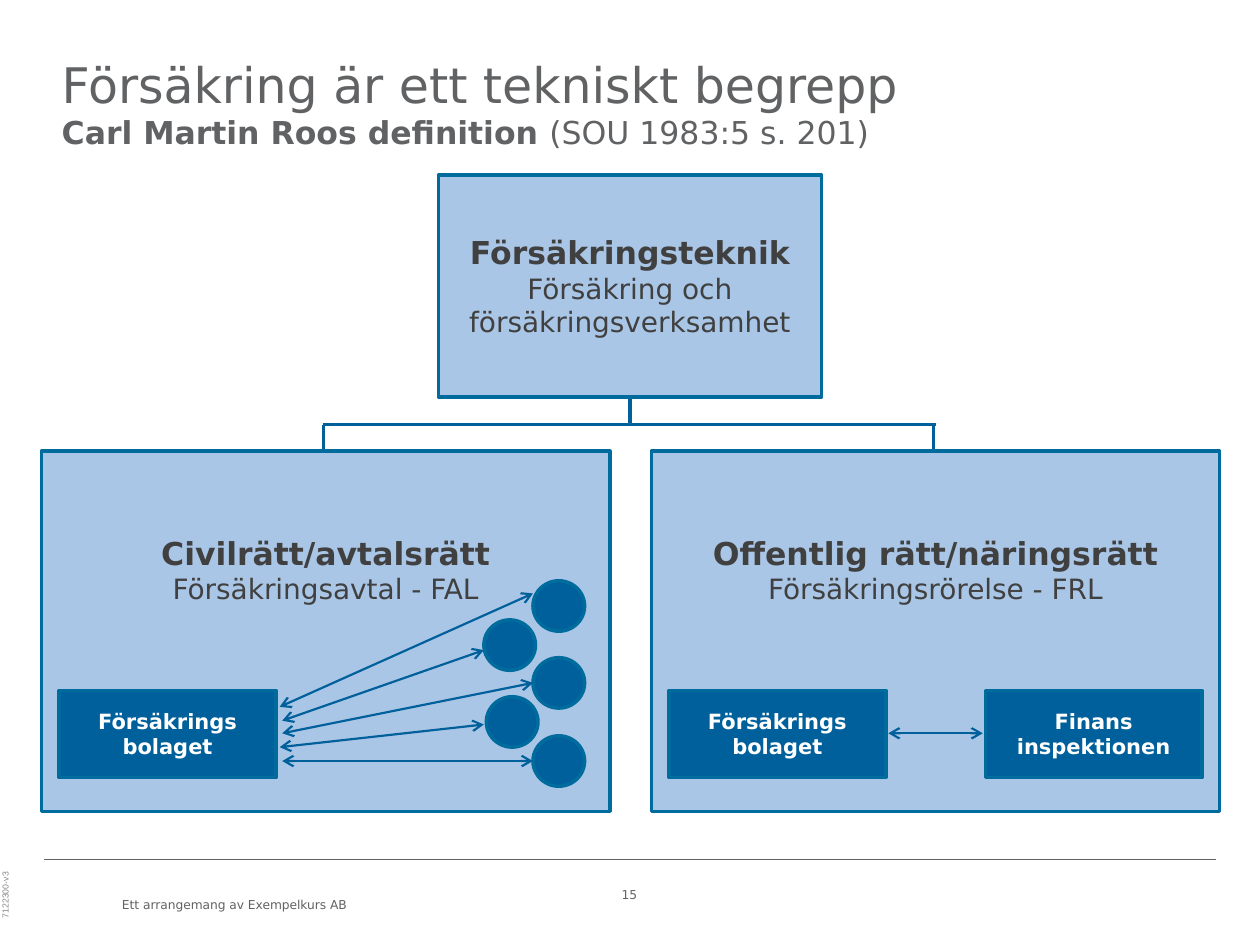
from dataclasses import dataclass

from lxml import etree
from pptx import Presentation
from pptx import util as u
from pptx.dml.color import RGBColor
from pptx.enum import shapes, text
from pptx.oxml.ns import qn

EMU_PER_PX = 9144  # 100 px to the inch


@dataclass(frozen=True)
class Theme:
    font: str = "DejaVu Sans"
    side_font: str = "Arial"
    grey: str = "616264"
    pale_grey: str = "898989"
    dark: str = "404040"
    white: str = "FFFFFF"
    panel: str = "AAC6E6"
    blue: str = "00609B"
    border: str = "006B9D"
    title: float = 28
    heading: float = 18
    body: float = 16
    label: float = 12
    footer: float = 7
    side: float = 5
    border_width: float = 2
    tree_width: float = 1.75
    arrow_width: float = 1.25
    rule_width: float = 0.75


THEME = Theme()
CENTER = text.PP_ALIGN.CENTER
MIDDLE = text.MSO_ANCHOR.MIDDLE
TOP = text.MSO_ANCHOR.TOP


def px(value):
    return u.Emu(value * EMU_PER_PX)


def write(shape, paragraphs, color, font=THEME.font, align=None, anchor=TOP,
          insets=(10, 5, 10, 5)):
    """Fill a shape; each paragraph is a list of (words, size, bold) spans."""
    frame = shape.text_frame
    frame.word_wrap = True
    frame.vertical_anchor = anchor
    (frame.margin_left, frame.margin_top,
     frame.margin_right, frame.margin_bottom) = map(px, insets)
    for index, spans in enumerate(paragraphs):
        para = frame.add_paragraph() if index else frame.paragraphs[0]
        para.alignment = align
        for words, size, bold in spans:
            span = para.add_run()
            span.text = words.rstrip("\n")
            span.font.name = font
            span.font.size = u.Pt(size)
            span.font.bold = bold
            span.font.color.rgb = RGBColor.from_string(color)
            if words.endswith("\n"):
                para.add_line_break()


def add_text(page, at, paragraphs, color, **style):
    box = page.shapes.add_textbox(*map(px, at))
    write(box, paragraphs, color, **style)
    return box


def add_block(parent, kind, at, fill):
    block = parent.shapes.add_shape(kind, *map(px, at))
    block.shadow.inherit = False
    block.fill.solid()
    block.fill.fore_color.rgb = RGBColor.from_string(fill)
    block.line.color.rgb = RGBColor.from_string(THEME.border)
    block.line.width = u.Pt(THEME.border_width)
    return block


def add_line(parent, start, end, width, color=THEME.blue, arrows=False):
    line = parent.shapes.add_connector(
        shapes.MSO_CONNECTOR.STRAIGHT, *map(px, (*start, *end)))
    line.line.color.rgb = RGBColor.from_string(color)
    line.line.width = u.Pt(width)
    if arrows:
        outline = line.line._get_or_add_ln()
        for tag in ("a:headEnd", "a:tailEnd"):
            etree.SubElement(outline, qn(tag), type="arrow")
    etree.SubElement(line._element.spPr, qn("a:effectLst"))


def heading_and_body(heading, body):
    return [[(heading, THEME.heading, True)], [(body, THEME.body, False)]]


def add_panel(page, left, heading, body):
    group = page.shapes.add_group_shape()
    panel = add_block(group, shapes.MSO_SHAPE.RECTANGLE,
                      (left, 358, 451, 286), THEME.panel)
    write(panel, heading_and_body(heading, body), THEME.dark,
          align=CENTER, insets=(10, 66, 10, 5))
    return group


def add_party(group, left, *lines):
    party = add_block(group, shapes.MSO_SHAPE.ROUNDED_RECTANGLE,
                      (left, 548, 172, 69), THEME.blue)
    party.adjustments[0] = 0
    write(party, [[(line, THEME.label, True)] for line in lines],
          THEME.white, align=CENTER, anchor=MIDDLE)


def add_tree(page):
    add_line(page, (500, 308), (500, 338), THEME.tree_width)
    root = add_block(page, shapes.MSO_SHAPE.RECTANGLE,
                     (348, 139, 304, 176), THEME.panel)
    write(root, heading_and_body("Försäkringsteknik",
                                 "Försäkring och försäkringsverksamhet"),
          THEME.dark, align=CENTER, anchor=MIDDLE)
    add_line(page, (256, 337), (743, 337), THEME.tree_width)
    for x in (257, 741):
        add_line(page, (x, 337), (x, 372), THEME.tree_width)


def add_public_law(page):
    group = add_panel(page, 517, "Offentlig rätt/näringsrätt",
                      "Försäkringsrörelse - FRL")
    add_party(group, 531, "Försäkrings", "bolaget")
    add_party(group, 782, "Finans", "inspektionen")
    add_line(group, (705, 582), (780, 582), THEME.arrow_width, arrows=True)


def add_civil_law(page):
    group = add_panel(page, 33, "Civilrätt/avtalsrätt",
                      "Försäkringsavtal - FAL")
    add_party(group, 47, "Försäkrings", "bolaget")
    for left, top in ((423, 584), (386, 553), (423, 522), (384, 492), (423, 461)):
        add_block(group, shapes.MSO_SHAPE.OVAL, (left, top, 41, 40), THEME.blue)
    for start, end in (((222, 561), (423, 471)), ((224, 572), (384, 516)),
                       ((224, 582), (423, 542)), ((222, 593), (384, 575)),
                       ((224, 604), (423, 604))):
        add_line(group, start, end, THEME.arrow_width, arrows=True)


def add_footer(page):
    add_line(page, (35, 682), (965, 682), THEME.rule_width, THEME.grey)
    add_text(page, (87, 708, 260, 20),
             [[("Ett arrangemang av Exempelkurs AB", THEME.footer, False)]],
             THEME.grey, anchor=MIDDLE)
    add_text(page, (430, 699, 139, 28), [[("15", THEME.footer, False)]],
             THEME.grey, align=CENTER)
    side = add_text(page, (0, 656, 19, 94),
                    [[("7122300-v3", THEME.side, False)]], THEME.pale_grey,
                    font=THEME.side_font, insets=(0, 5, 10, 21))
    side.text_frame._txBody.bodyPr.set("vert", "vert270")


def main():
    deck = Presentation()
    deck.slide_width, deck.slide_height = px(1000), px(750)
    page = deck.slides.add_slide(deck.slide_layouts[6])
    add_text(page, (49, 43, 900, 98),
             [[("Försäkring är ett tekniskt begrepp\n", THEME.title, False),
               ("Carl Martin Roos definition ", THEME.heading, True),
               ("(SOU 1983:5 s. 201)", THEME.heading, False)]],
             THEME.grey, insets=(0, 0, 0, 0))
    add_tree(page)
    add_public_law(page)
    add_civil_law(page)
    add_footer(page)
    deck.save("out.pptx")


if __name__ == "__main__":
    main()
